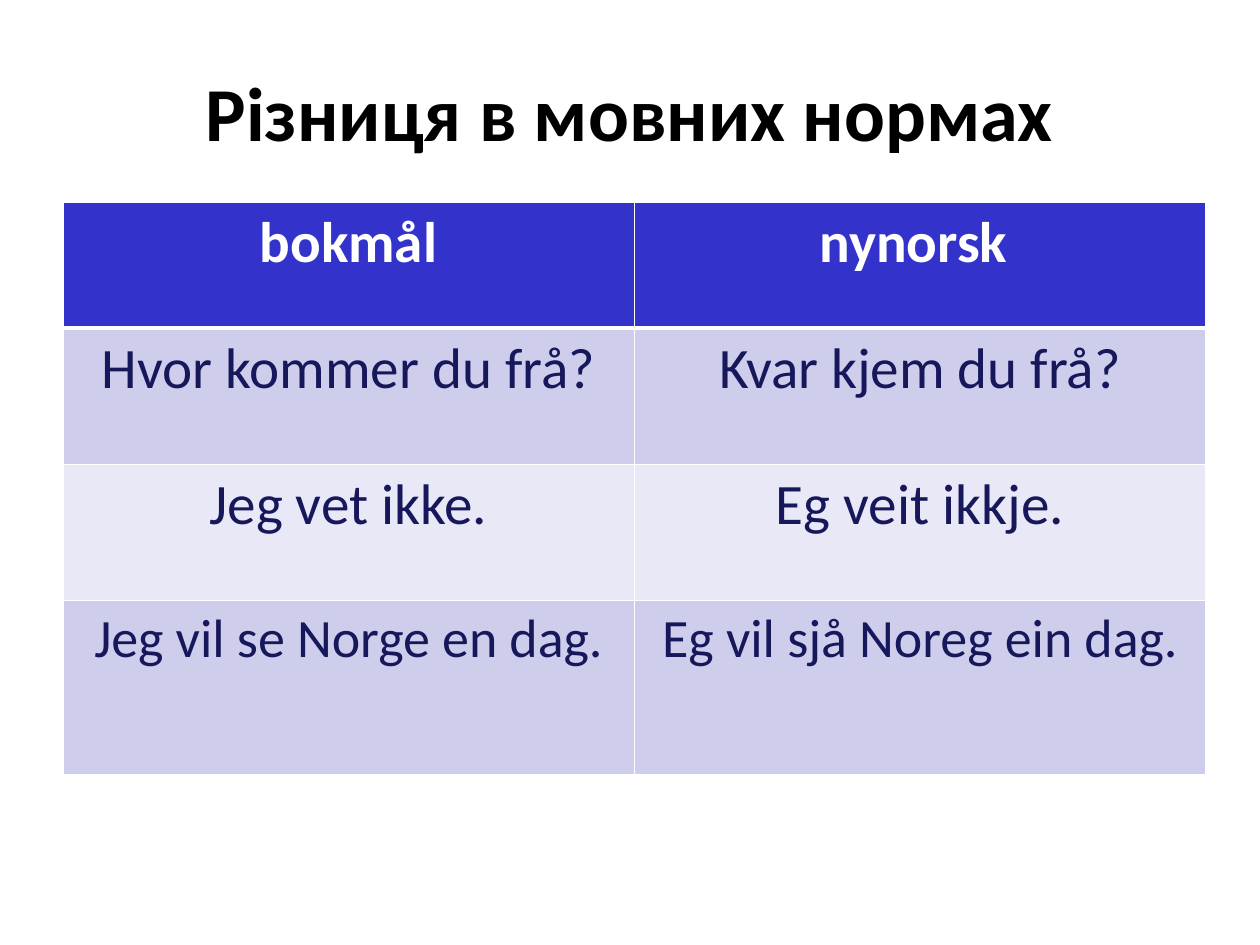
from pptx import Presentation
from pptx.dml.color import RGBColor
from pptx.enum import text
from pptx.oxml import parse_xml
from pptx.oxml import ns
from pptx.util import Pt

COLORS = {
    "title": "000000",
    "header": "3333CC",
    "header_text": "FFFFFF",
    "odd_row": "CECEEC",
    "even_row": "E8E8F6",
    "body_text": "17175C",
    "border": "FFFFFF",
}
PHRASES = [
    ("bokmål", "nynorsk "),
    ("Hvor kommer du frå?", "Kvar kjem du frå?"),
    ("Jeg vet ikke.", "Eg veit ikkje."),
    ("Jeg vil se Norge en dag.", "Eg vil sjå Noreg ein dag."),
]
ROW_HEIGHTS = [79.2, 85.7, 85.7, 109.8]
ROW_SIZES = [36, 36, 36, 34]
TIGHT = 0.93
ROW_SPACING = [[TIGHT, TIGHT], [1, 1], [1, 1], [TIGHT, 1]]


def write(tf, words, size, color, bold=False, spacing=1):
    p = tf.paragraphs[0]
    p.alignment = text.PP_ALIGN.CENTER
    p.line_spacing = spacing
    r = p.add_run()
    r.text = words
    r.font.name = "Calibri"
    r.font.size = Pt(size)
    r.font.bold = bold
    r.font.color.rgb = RGBColor.from_string(COLORS[color])


def set_borders(cell, top, bottom):
    """Draw the four cell edges; top and bottom are widths in points."""
    tcPr = cell._tc.get_or_add_tcPr()
    widths = {"lnL": 1, "lnR": 1, "lnT": top, "lnB": bottom}
    for i, (edge, width) in enumerate(widths.items()):
        tcPr.insert(i, parse_xml(
            f'<a:{edge} {ns.nsdecls("a")} w="{Pt(width)}"><a:solidFill>'
            f'<a:srgbClr val="{COLORS["border"]}"/></a:solidFill></a:{edge}>'))


def add_title(s, x, y, w, h):
    tf = s.shapes.add_textbox(Pt(x), Pt(y), Pt(w), Pt(h)).text_frame
    tf.word_wrap = True
    tf.vertical_anchor = text.MSO_ANCHOR.MIDDLE
    tf.margin_left = tf.margin_right = tf.margin_top = tf.margin_bottom = 0
    write(tf, "Різниця в мовних нормах", 48, "title", True, TIGHT)


def add_phrase_table(s, x, y, w):
    rows, cols = len(PHRASES), len(PHRASES[0])
    table = s.shapes.add_table(
        rows, cols, Pt(x), Pt(y), Pt(w), Pt(sum(ROW_HEIGHTS))).table
    for column in table.columns:
        column.width = Pt(w / cols)
    for i, phrases in enumerate(PHRASES):
        table.rows[i].height = Pt(ROW_HEIGHTS[i])
        header = i == 0
        fill = "header" if header else "odd_row" if i % 2 else "even_row"
        color = "header_text" if header else "body_text"
        for j, phrase in enumerate(phrases):
            cell = table.cell(i, j)
            spacing = ROW_SPACING[i][j]
            cell.margin_top = Pt(5 if spacing == TIGHT else 3.6)
            cell.fill.solid()
            cell.fill.fore_color.rgb = RGBColor.from_string(COLORS[fill])
            set_borders(cell, 3 if i == 1 else 1, 3 if header else 1)
            write(cell.text_frame, phrase, ROW_SIZES[i], color, header, spacing)


def main():
    prs = Presentation()
    prs.slide_width, prs.slide_height = Pt(793.75), Pt(595.25)
    s = prs.slides.add_slide(prs.slide_layouts[6])
    add_title(s, 39.6, 23.6, 714, 99.2)
    add_phrase_table(s, 39.6, 127.5, 720)
    prs.save("out.pptx")


if __name__ == "__main__":
    main()
